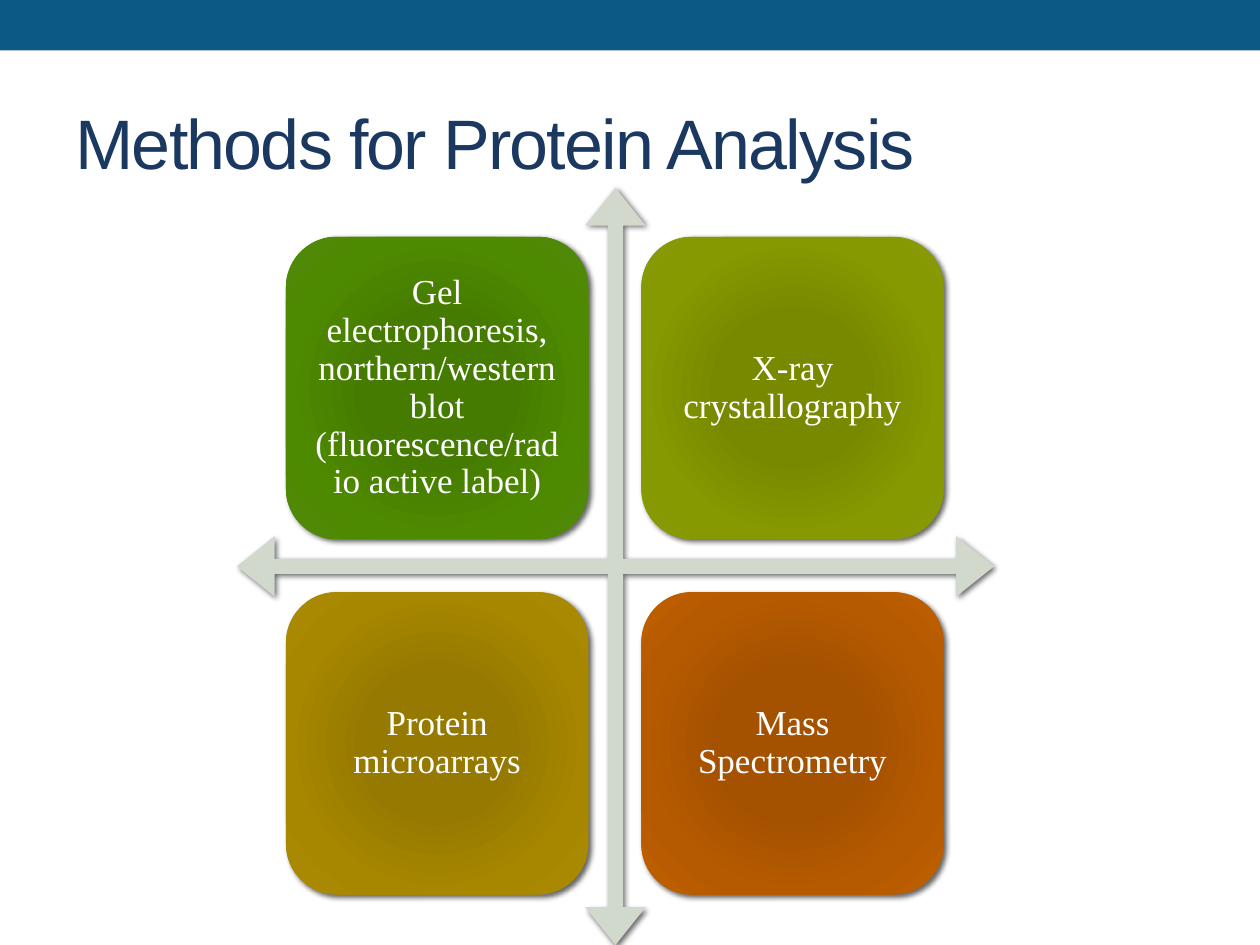
from lxml.etree import SubElement
from pptx import Presentation
from pptx.dml.color import RGBColor
from pptx.enum.shapes import MSO_SHAPE
from pptx.enum.text import MSO_ANCHOR, PP_ALIGN
from pptx.oxml import parse_xml
from pptx.oxml.ns import nsdecls, qn
from pptx.util import Inches, Pt

CARD_SIZE = 2.4
CARD_STEP = 2.82
CARD_LEFT, CARD_TOP = 2.27, 1.88
CARDS = [
    ("Gel electrophoresis, northern/western blot (fluorescence/radio active label)",
     ("457B00", "4E8A00", "508709")),
    ("X-ray crystallography", ("788900", "869900", "879907")),
    ("Protein microarrays", ("967900", "A78700", "AC8B04")),
    ("Mass Spectrometry", ("A45100", "B65A00", "BF5E00")),
]


def rgb(color):
    return RGBColor.from_string(color)


def add_shape(s, kind, left, top, width, height, color):
    sp = s.shapes.add_shape(kind, Inches(left), Inches(top), Inches(width), Inches(height))
    sp.fill.solid()
    sp.fill.fore_color.rgb = rgb(color)
    sp.line.fill.background()
    sp.shadow.inherit = False
    return sp


def add_shadow(sp):
    effects = sp._element.spPr.find(qn("a:effectLst"))
    shadow = SubElement(effects, qn("a:outerShdw"), blurRad=str(Pt(3)), dist=str(Pt(2)),
                        dir=str(45 * 60000), algn="ctr", rotWithShape="0")
    color = SubElement(shadow, qn("a:srgbClr"), val="000000")
    SubElement(color, qn("a:alpha"), val="60000")


def set_radial_fill(sp, inner, middle, outer):
    """Replace the solid fill with a gradient running out from the centre."""
    stops = "".join(
        f'<a:gs pos="{pos * 1000}"><a:srgbClr val="{color}"/></a:gs>'
        for pos, color in ((0, inner), (34, inner), (70, middle), (100, outer)))
    gradient = parse_xml(
        f'<a:gradFill {nsdecls("a")} rotWithShape="1"><a:gsLst>{stops}</a:gsLst>'
        '<a:path path="circle"><a:fillToRect l="50000" t="50000" r="50000" b="50000"/>'
        '</a:path></a:gradFill>')
    spPr = sp._element.spPr
    spPr.replace(spPr.find(qn("a:solidFill")), gradient)


def set_font(p, name, size, color):
    p.font.name = name
    p.font.size = Pt(size)
    p.font.color.rgb = rgb(color)


def add_title(s, text):
    tf = s.shapes.add_textbox(Inches(0.5), Inches(0.58), Inches(9), Inches(1.08)).text_frame
    tf.word_wrap = True
    tf.vertical_anchor = MSO_ANCHOR.MIDDLE
    p = tf.paragraphs[0]
    r = p.add_run()
    r.text = text
    r.font._element.set("spc", "-100")
    set_font(p, "Arial", 40, "1B3861")


def add_axes(s):
    sp = add_shape(s, MSO_SHAPE.QUAD_ARROW, 1.88, 1.49, 6.01, 6.01, "D0D9CC")
    for i, value in enumerate((0.02, 0.04, 0.05)):
        sp.adjustments[i] = value
    add_shadow(sp)


def add_card(s, left, top, text, colors):
    sp = add_shape(s, MSO_SHAPE.ROUNDED_RECTANGLE, left, top, CARD_SIZE, CARD_SIZE, colors[0])
    set_radial_fill(sp, *colors)
    add_shadow(sp)
    tf = sp.text_frame
    tf.word_wrap = True
    tf.vertical_anchor = MSO_ANCHOR.MIDDLE
    tf.margin_left = tf.margin_right = tf.margin_top = tf.margin_bottom = Inches(0.08)
    p = tf.paragraphs[0]
    p.text = text
    p.alignment = PP_ALIGN.CENTER
    p.line_spacing = 0.9
    set_font(p, "Times New Roman", 20, "FFFFFF")


def main():
    prs = Presentation()
    prs.slide_width, prs.slide_height = Inches(10), Inches(7.5)
    s = prs.slides.add_slide(prs.slide_layouts[6])
    add_shape(s, MSO_SHAPE.RECTANGLE, 0, 0, 10, 0.4, "0C5986")
    add_title(s, "Methods for Protein Analysis")
    add_axes(s)
    for i, (text, colors) in enumerate(CARDS):
        row, col = divmod(i, 2)
        add_card(s, CARD_LEFT + col * CARD_STEP, CARD_TOP + row * CARD_STEP, text, colors)
    prs.save("out.pptx")


if __name__ == "__main__":
    main()
